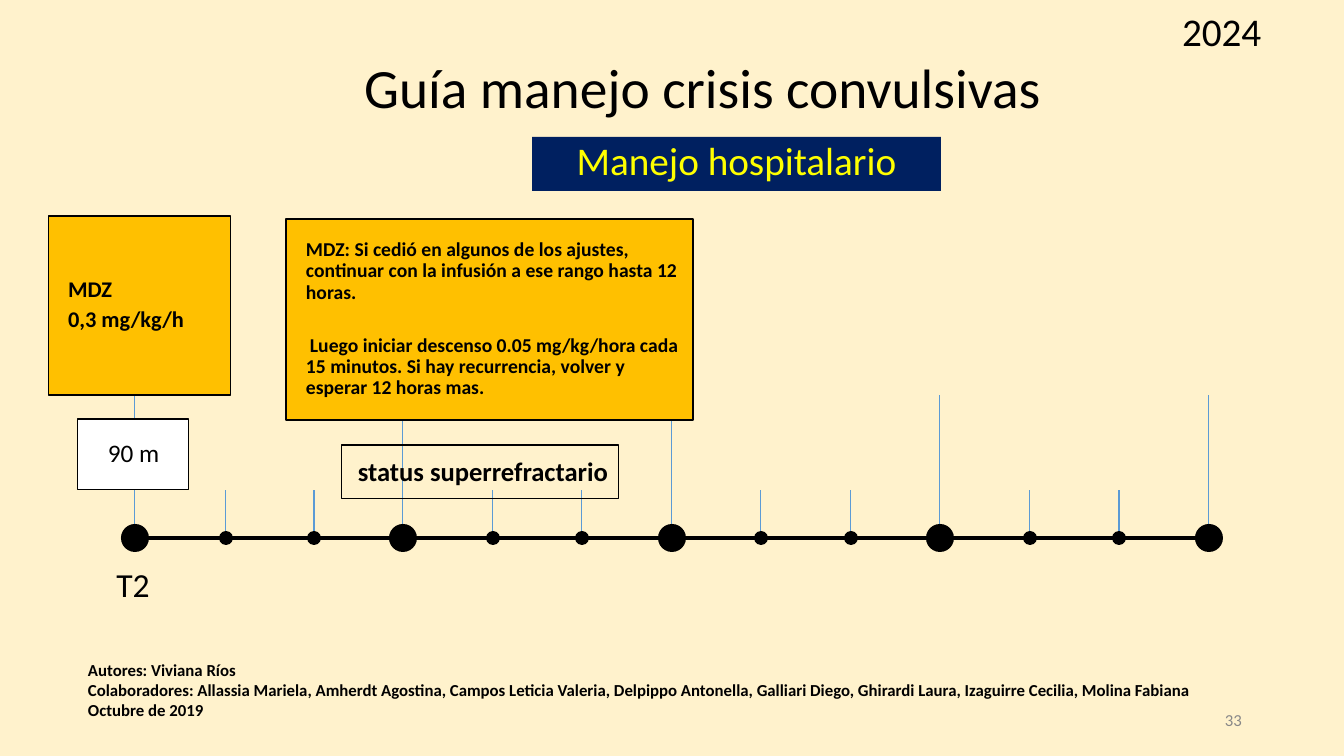
from pptx import Presentation
from pptx.dml.color import RGBColor
from pptx.enum.shapes import MSO_CONNECTOR, MSO_SHAPE
from pptx.enum.text import MSO_ANCHOR, MSO_AUTO_SIZE, PP_ALIGN
from pptx.oxml.ns import qn
from pptx.util import Pt
from lxml import etree

RECTANGLE, OVAL = MSO_SHAPE.RECTANGLE, MSO_SHAPE.OVAL
STRAIGHT = MSO_CONNECTOR.STRAIGHT
TOP, MIDDLE = MSO_ANCHOR.TOP, MSO_ANCHOR.MIDDLE
LEFT, CENTER, RIGHT = PP_ALIGN.LEFT, PP_ALIGN.CENTER, PP_ALIGN.RIGHT
NO_FIT = MSO_AUTO_SIZE.NONE

COLORS = {
    "cream": "FFF2CC",
    "black": "000000",
    "white": "FFFFFF",
    "navy": "002060",
    "yellow": "FFFF00",
    "amber": "FFC000",
    "blue": "5B9BD5",
    "gray": "888888",
}
MINOR_SHIFTS = {1: 2}


def px(value):
    return round(value * 914400 / 100.8)


def color(name):
    return RGBColor.from_string(COLORS[name])


def write_text(shape, paragraphs, size, ink="black", bold=False, align=LEFT,
               anchor=MIDDLE, spacing=0.9, gaps=(), insets=(10, 5, 10, 5)):
    frame = shape.text_frame
    left, top, right, bottom = map(px, insets)
    frame_format = {
        "word_wrap": True, "auto_size": NO_FIT, "vertical_anchor": anchor,
        "margin_left": left, "margin_top": top,
        "margin_right": right, "margin_bottom": bottom,
    }
    for name, value in frame_format.items():
        setattr(frame, name, value)
    for index, text in enumerate(paragraphs):
        paragraph = frame.paragraphs[0] if index == 0 else frame.add_paragraph()
        paragraph_format = {
            "alignment": align, "line_spacing": spacing,
            "space_before": Pt(gaps[index - 1] if index and gaps else 0),
        }
        for name, value in paragraph_format.items():
            setattr(paragraph, name, value)
        run = paragraph.add_run()
        run.text = text
        font_format = {"name": "Calibri", "size": Pt(size), "bold": bold}
        for name, value in font_format.items():
            setattr(run.font, name, value)
        run.font.color.rgb = color(ink)


def place(shape, box):
    for name, value in zip(("left", "top", "width", "height"), box):
        setattr(shape, name, px(value))


def add_label(slide, box, paragraphs, size, **text_format):
    shape = slide.shapes.add_textbox(*map(px, box))
    write_text(shape, paragraphs, size, **text_format)


def add_solid(slide, kind, box, fill=None, line_width=None):
    shape = slide.shapes.add_shape(kind, *map(px, box))
    shape.shadow.inherit = False
    if fill:
        shape.fill.solid()
        shape.fill.fore_color.rgb = color(fill)
    else:
        shape.fill.background()
    if line_width:
        shape.line.color.rgb = color("black")
        shape.line.width = Pt(line_width)
    else:
        shape.line.fill.background()
    return shape


def add_line(slide, start, end, ink, width):
    line = slide.shapes.add_connector(STRAIGHT, *map(px, (*start, *end)))
    line.line.color.rgb = color(ink)
    line.line.width = Pt(width)
    etree.SubElement(line._element.spPr, qn("a:effectLst"))


def add_timeline(slide, box):
    left, top, width, height = box
    axis = top + height
    add_line(slide, (left, axis), (left + width, axis), "black", 2.84)
    for step in range(13):
        x = left + step * width // 12 + MINOR_SHIFTS.get(step, 0)
        major = step % 3 == 0
        tick, radius = (height, 14) if major else (48, 7)
        add_line(slide, (x, axis), (x, axis - tick), "blue", 0.75)
        add_solid(slide, OVAL, (x - radius, axis - radius, 2 * radius, 2 * radius), "black")


def add_heading(slide, box):
    left, top, width, height = box
    title, subtitle = slide.placeholders
    place(title, (left, top, width, 76))
    write_text(title, ["Guía manejo crisis convulsivas"], 39.6, align=CENTER,
               anchor=TOP, insets=(10, 5, 22, 5))
    place(subtitle, (left + 232, top + height - 54, 409, 54))
    subtitle.fill.solid()
    subtitle.fill.fore_color.rgb = color("navy")
    write_text(subtitle, ["Manejo hospitalario"], 28, ink="yellow", align=CENTER, anchor=TOP)


def add_treatment(slide, box):
    left, top, width, height = box
    dose = add_solid(slide, RECTANGLE, (left, top, 183, 179), "amber", 0.75)
    write_text(dose, ["MDZ", "0,3 mg/kg/h"], 16, bold=True, gaps=(4,), insets=(20, 5, 10, 5))
    time = add_solid(slide, RECTANGLE, (left + 30, top + height - 80, 111, 71), "white", 0.75)
    write_text(time, ["90 m"], 18, align=CENTER)
    advice = add_solid(slide, RECTANGLE, (left + width - 407, top + 3, 407, 201), "amber", 1.5)
    write_text(advice, [
        "MDZ: Si cedió en algunos de los ajustes, continuar con la infusión "
        "a ese rango hasta 12 horas.",
        "Luego iniciar descenso 0.05 mg/kg/hora cada 15 minutos. "
        "Si hay recurrencia, volver y esperar 12 horas mas.",
    ], 14, bold=True, gaps=(23,), insets=(20, 5, 10, 5))
    second = advice.text_frame.paragraphs[1]._p.get_or_add_pPr()
    second.set("indent", str(px(4)))
    status = add_solid(slide, RECTANGLE, (left + 294, top + height - 54, 277, 54), None, 0.75)
    write_text(status, ["status superrefractario"], 19, bold=True, anchor=TOP,
               spacing=1.0, insets=(16, 10, 5, 10))


def add_footer(slide, box):
    left, top, width, height = box
    add_label(slide, (left, top, width, 60), [
        "Autores: Viviana Ríos",
        "Colaboradores: Allassia Mariela, Amherdt Agostina, Campos Leticia Valeria, "
        "Delpippo Antonella, Galliari Diego, Ghirardi Laura, Izaguirre Cecilia, Molina Fabiana",
        "Octubre de 2019",
    ], 12, bold=True, spacing=1.0)
    add_label(slide, (left + 872, top + height - 40, 302, 40), ["33"], 12,
              ink="gray", align=RIGHT, spacing=1.0)


def main():
    presentation = Presentation()
    presentation.slide_width = px(1344)
    presentation.slide_height = px(756)
    slide = presentation.slides.add_slide(presentation.slide_layouts[0])
    slide.background.fill.solid()
    slide.background.fill.fore_color.rgb = color("cream")
    add_timeline(slide, (135, 395, 1074, 143))
    add_heading(slide, (300, 56, 817, 135))
    add_treatment(slide, (48, 216, 645, 283))
    add_label(slide, (99, 559, 68, 56), ["T2"], 24, align=CENTER, insets=(0, 0, 0, 0))
    add_label(slide, (1182, 4, 106, 60), ["2024"], 28, insets=(0, 0, 0, 0))
    add_footer(slide, (78, 660, 1149, 80))
    presentation.save("out.pptx")


if __name__ == "__main__":
    main()
